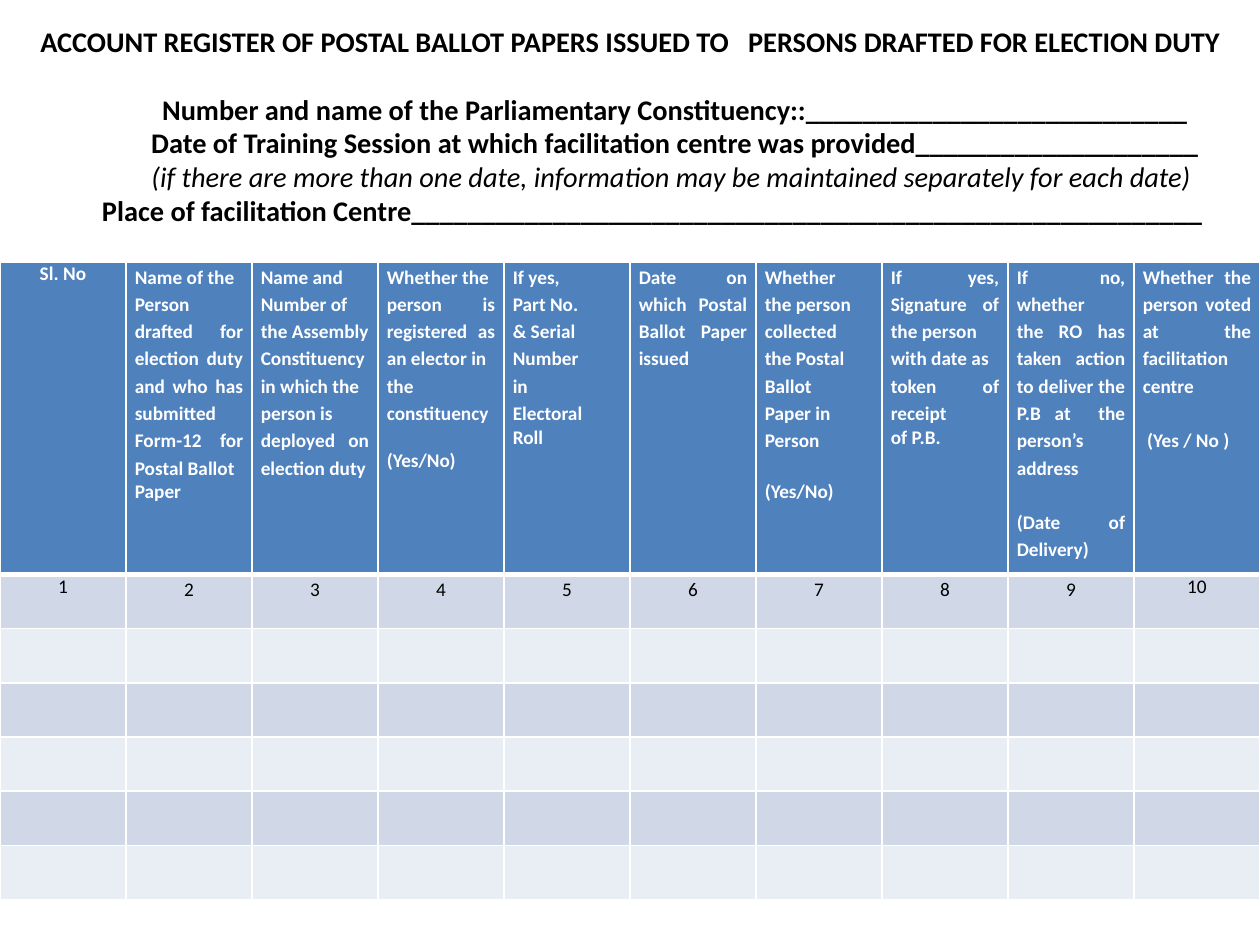
from lxml import etree
from pptx import Presentation, util as u
from pptx.dml.color import RGBColor
from pptx.enum import text as t
from pptx.oxml.ns import qn

THEME = dict(font="Calibri", big=16.2, small=11, dark="000000", light="FFFFFF",
             head="4F81BD", bands=("D0D8E8", "E9EDF4"))
MID, LEFT, FULL = t.PP_ALIGN.CENTER, t.PP_ALIGN.LEFT, t.PP_ALIGN.JUSTIFY
WIDE, PITCH = 1.15, 19.4
GAP = 13.4  # one line of small type, in points

# text, left indent in inches, bold
LINES = [
    ("ACCOUNT REGISTER OF POSTAL BALLOT PAPERS ISSUED TO   "
     "PERSONS DRAFTED FOR ELECTION DUTY", 0, True),
    ("Number and name of the Parliamentary Constituency::" + "_" * 27, 0.71, True),
    ("Date of Training Session at which facilitation centre was provided"
     + "_" * 20, 0.71, True),
    ("(if there are more than one date, information may be maintained "
     "separately for each date)", 0.65, False),
    ("Place of facilitation Centre" + "_" * 56, 0.35, True),
]

# alignment, paragraphs, is the last one single spaced, gap before the last
HEADS = [
    (MID, ["Sl. No"], True, 0),
    (FULL, ["Name of the", "Person drafted for election duty and who has submitted",
            "Form-12 for Postal Ballot", "Paper"], True, 0),
    (LEFT, ["Name and Number of the Assembly Constituency in which the "
            "person is  deployed   on election duty"], False, 0),
    (FULL, ["Whether the", "person is registered as an elector in", "the",
            "constituency", "(Yes/No)"], True, GAP),
    (FULL, ["If yes,", "Part No.", "& Serial", "Number", "in", "Electoral",
            "Roll"], True, 0),
    (FULL, ["Date on which Postal Ballot Paper issued "], False, 0),
    (FULL, ["Whether", "the person", "collected", "the Postal", "Ballot",
            "Paper in", "Person", "(Yes/No)"], True, GAP * WIDE),
    (FULL, ["If yes, Signature  of the person", "with date as",
            "token of receipt", "of P.B."], True, 0),
    (FULL, ["If no, whether",
            "the RO has taken action to deliver the P.B at  the person’s",
            "address ", "(Date of Delivery)"], False, GAP * WIDE),
    (FULL, ["Whether the person voted at the facilitation centre",
            " (Yes / No )"], False, GAP * WIDE),
]
ROWS = [2.48] + [0.43] * 6


def put(obj, **vals):
    for key, val in vals.items():
        setattr(obj, key, val)


def write(par, words, size, tint, bold, slant=False, **form):
    put(par, **form)
    run = par.add_run()
    run.text = words
    put(run.font, name=THEME["font"], size=u.Pt(size), bold=bold, italic=slant)
    run.font.color.rgb = RGBColor.from_string(tint)


def edge(cell, top, foot):
    """Draw the four cell borders; top and foot are widths in points."""
    props = cell._tc.get_or_add_tcPr()
    for side, width in zip("LRTB", (1, 1, top, foot)):
        line = etree.SubElement(props, qn("a:ln" + side), w=str(u.Pt(width)))
        fill = etree.SubElement(line, qn("a:solidFill"))
        etree.SubElement(fill, qn("a:srgbClr"), val=THEME["light"])


def dress(cell, row):
    put(cell, margin_left=u.Inches(0.07), margin_right=u.Inches(0.07),
        margin_top=0, margin_bottom=0)
    edge(cell, 3 if row == 1 else 1, 3 if row == 0 else 1)
    cell.fill.solid()
    tint = THEME["bands"][(row - 1) % 2] if row else THEME["head"]
    cell.fill.fore_color.rgb = RGBColor.from_string(tint)


def title(slide):
    box = slide.shapes.add_textbox(0, 0, u.Inches(10), u.Inches(1.67))
    frame = box.text_frame
    put(frame, word_wrap=True, margin_top=u.Inches(0.19),
        vertical_anchor=t.MSO_ANCHOR.TOP)
    for i, (words, indent, bold) in enumerate(LINES):
        par = frame.add_paragraph() if i else frame.paragraphs[0]
        write(par, words, THEME["big"], THEME["dark"], bold, not bold,
              alignment=MID, line_spacing=u.Pt(PITCH),
              space_after=u.Pt(0 if i else PITCH))
        par._p.get_or_add_pPr().set("marL", str(u.Inches(indent)))


def table(slide):
    grid = slide.shapes.add_table(len(ROWS), len(HEADS), 0, u.Inches(2.08),
                                  u.Inches(10), u.Inches(sum(ROWS))).table
    for col in grid.columns:
        col.width = u.Inches(10 / len(HEADS))
    for r, high in enumerate(ROWS):
        grid.rows[r].height = u.Inches(high)
        for c in range(len(HEADS)):
            dress(grid.cell(r, c), r)
    for c, (align, pars, tight, gap) in enumerate(HEADS):
        frame = grid.cell(0, c).text_frame
        for i, words in enumerate(pars):
            last = i == len(pars) - 1
            par = frame.add_paragraph() if i else frame.paragraphs[0]
            write(par, words, THEME["small"], THEME["light"], True,
                  alignment=align, line_spacing=1.0 if last and tight else WIDE,
                  space_before=u.Pt(gap if last else 0))
        ends = c in (0, len(HEADS) - 1)
        write(grid.cell(1, c).text_frame.paragraphs[0], str(c + 1),
              THEME["small"], THEME["dark"], False,
              alignment=MID, line_spacing=1.0 if ends else WIDE)


def main():
    deck = Presentation()
    put(deck, slide_width=u.Inches(10), slide_height=u.Inches(7.5))
    slide = deck.slides.add_slide(deck.slide_layouts[6])
    title(slide)
    table(slide)
    deck.save("out.pptx")


if __name__ == "__main__":
    main()
